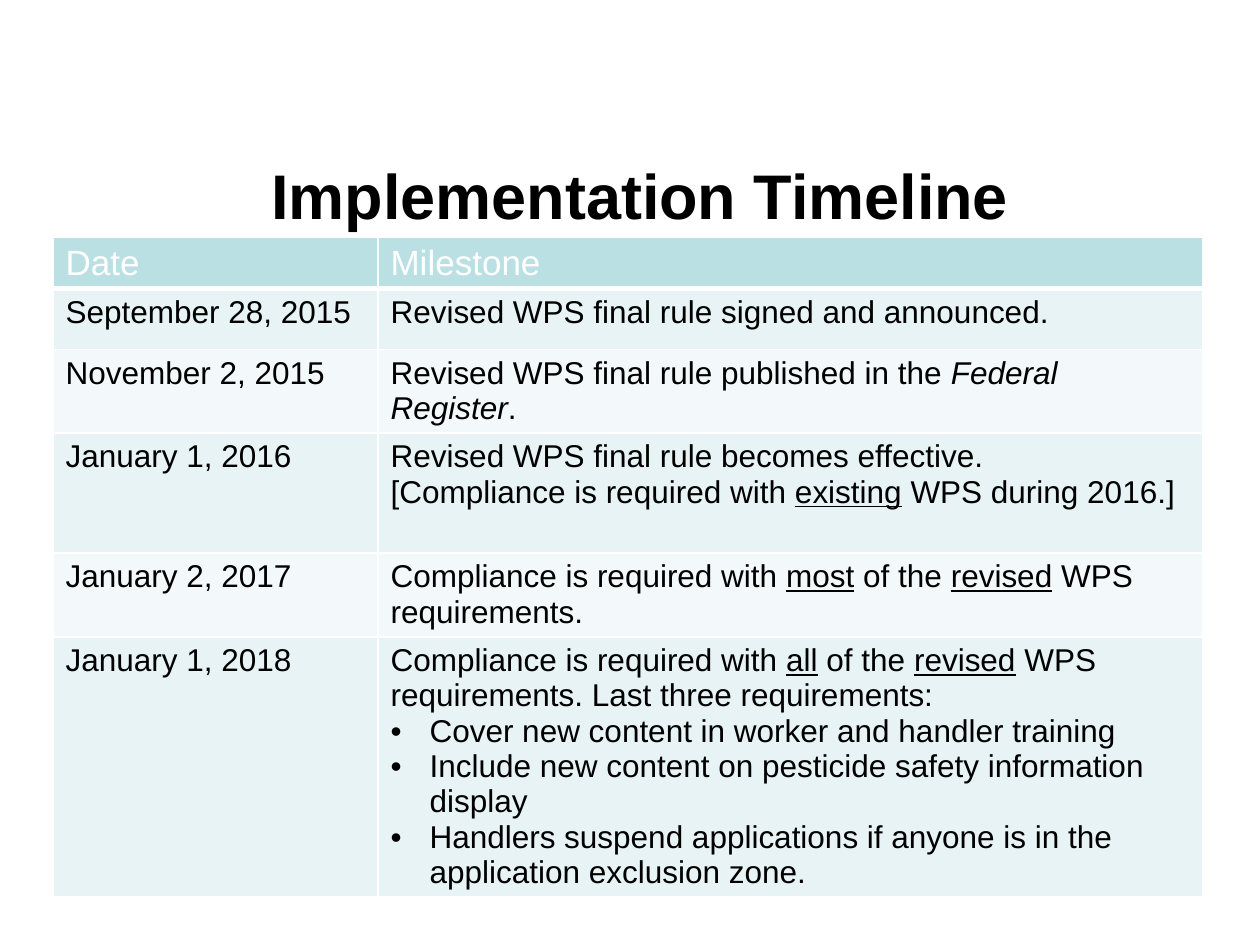
from lxml.etree import SubElement
from pptx import Presentation
from pptx.dml.color import RGBColor
from pptx.enum.text import MSO_ANCHOR, PP_ALIGN
from pptx.oxml.ns import qn
from pptx.util import Emu, Pt

PX = 914400 // 126
BLACK = RGBColor(0x00, 0x00, 0x00)
WHITE = RGBColor(0xFF, 0xFF, 0xFF)
HEADER_TEAL = RGBColor(0xBB, 0xE0, 0xE3)
BAND_DARK = RGBColor(0xE7, 0xF3, 0xF4)
BAND_LIGHT = RGBColor(0xF3, 0xF9, 0xFA)
BULLET = "• "
BULLET_INDENT = 39

# Row height, date, milestone paragraphs; _underlined_ text, *italic* text
ROWS = [
    (51, "Date", ["Milestone"]),
    (61, "September 28, 2015", ["Revised WPS final rule signed and announced."]),
    (83, "November 2, 2015",
     ["Revised WPS final rule published in the *Federal Register*."]),
    (120, "January 1, 2016",
     ["Revised WPS final rule becomes effective.",
      "[Compliance is required with _existing_ WPS during 2016.]"]),
    (84, "January 2, 2017",
     ["Compliance is required with _most_ of the _revised_ WPS requirements."]),
    (259, "January 1, 2018",
     ["Compliance is required with _all_ of the _revised_ WPS requirements. "
      "Last three requirements:",
      BULLET + "Cover new content in worker and handler training",
      BULLET + "Include new content on pesticide safety information display",
      BULLET + "Handlers suspend applications if anyone is in the "
      "application exclusion zone."]),
]
COLUMN_WIDTHS = [325, 825]


def set_borders(cell, bottom_width):
    properties = cell._tc.get_or_add_tcPr()
    for side, width in (("L", 1), ("R", 1), ("T", 1), ("B", bottom_width)):
        line = SubElement(properties, qn(f"a:ln{side}"), w=str(Pt(width)))
        fill = SubElement(line, qn("a:solidFill"))
        SubElement(fill, qn("a:srgbClr"), val=str(WHITE))


def write_paragraph(paragraph, text, size, color):
    if text.startswith(BULLET):
        text = text.removeprefix(BULLET)
        properties = paragraph._p.get_or_add_pPr()
        properties.set("marL", str(BULLET_INDENT * PX))
        properties.set("indent", str(-BULLET_INDENT * PX))
        SubElement(properties, qn("a:buFont"), typeface="Arial")
        SubElement(properties, qn("a:buChar"), char="•")
    for i, underline_part in enumerate(text.split("_")):
        for j, part in enumerate(underline_part.split("*")):
            run = paragraph.add_run()
            run.text = part
            if i % 2:
                run.font.underline = True
            if j % 2:
                run.font.italic = True
    paragraph.font.name = "Arial"
    paragraph.font.size = Pt(size)
    paragraph.font.color.rgb = color


presentation = Presentation()
presentation.slide_width = Emu(1260 * PX)
presentation.slide_height = Emu(945 * PX)
slide = presentation.slides.add_slide(presentation.slide_layouts[5])

# Title
title = slide.shapes.title
title.left, title.top = Emu(115 * PX), Emu(126 * PX)
title.width, title.height = Emu(1050 * PX), Emu(136 * PX)
title.text_frame.text = "Implementation Timeline"
title.text_frame.vertical_anchor = MSO_ANCHOR.MIDDLE
heading = title.text_frame.paragraphs[0]
heading.alignment = PP_ALIGN.CENTER
heading.font.name = "Arial"
heading.font.size = Pt(36)
heading.font.bold = True
heading.font.color.rgb = BLACK

# Timeline table
table = slide.shapes.add_table(
    len(ROWS), len(COLUMN_WIDTHS), Emu(53 * PX), Emu(237 * PX),
    Emu(sum(COLUMN_WIDTHS) * PX), Emu(sum(row[0] for row in ROWS) * PX)).table
table.first_row = False
table.horz_banding = False
for column, width in zip(table.columns, COLUMN_WIDTHS):
    column.width = Emu(width * PX)

for index, (height, date, milestone) in enumerate(ROWS):
    table.rows[index].height = Emu(height * PX)
    if index == 0:
        background, size, color, bottom_width = HEADER_TEAL, 20, WHITE, 3
    else:
        background = BAND_DARK if index % 2 else BAND_LIGHT
        size, color, bottom_width = 18, BLACK, 1
    for cell, texts in zip(table.rows[index].cells, ([date], milestone)):
        set_borders(cell, bottom_width)
        cell.fill.solid()
        cell.fill.fore_color.rgb = background
        for number, text in enumerate(texts):
            frame = cell.text_frame
            paragraph = frame.add_paragraph() if number else frame.paragraphs[0]
            write_paragraph(paragraph, text, size, color)

presentation.save("out.pptx")
